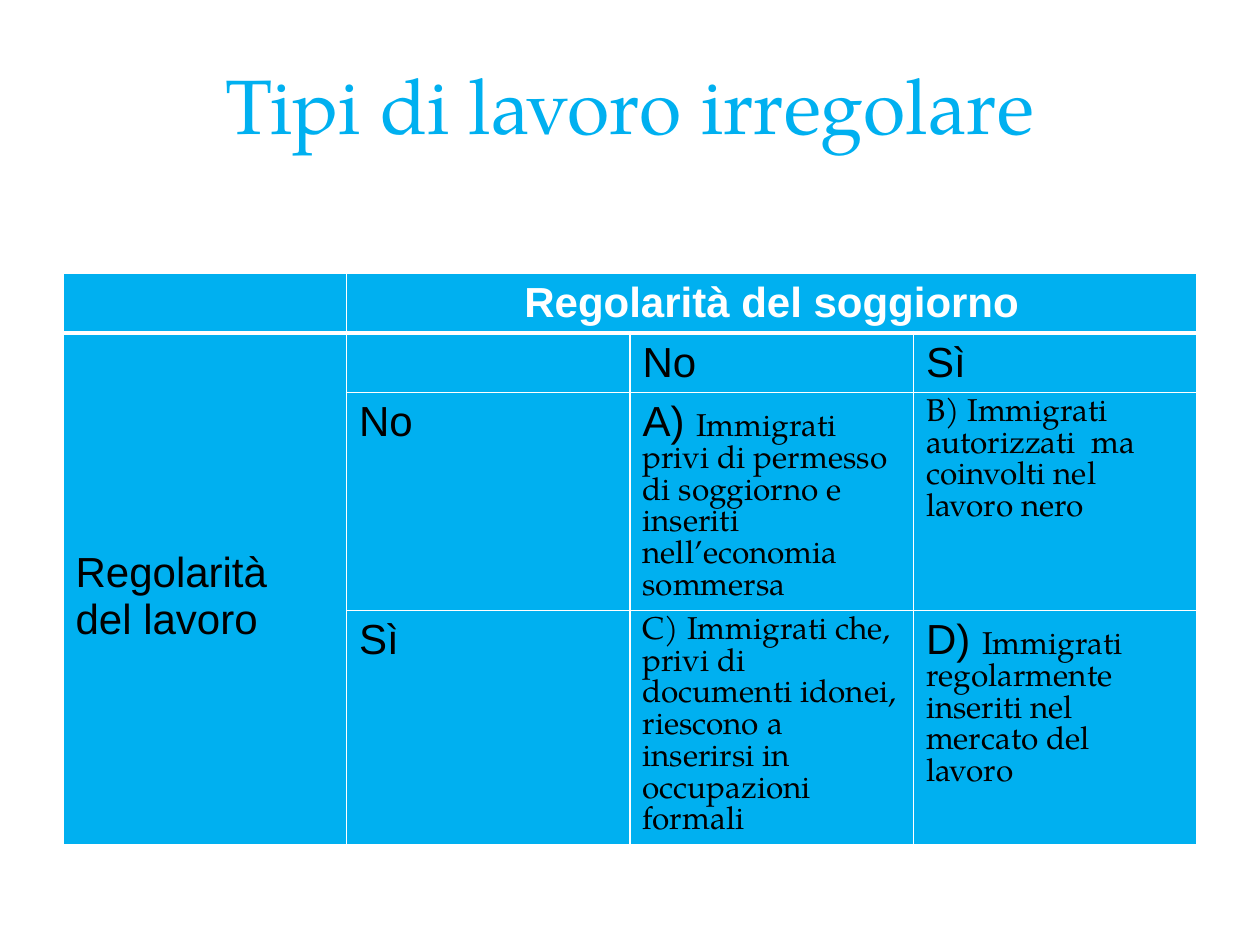
from lxml.etree import SubElement
from pptx import Presentation
from pptx.dml.color import RGBColor
from pptx.enum.text import MSO_ANCHOR, PP_ALIGN
from pptx.oxml.ns import qn
from pptx.util import Inches, Pt

SKY = RGBColor(0x00, 0xB0, 0xF0)
WHITE = RGBColor(0xFF, 0xFF, 0xFF)
BLACK = RGBColor(0x00, 0x00, 0x00)
LABEL_FONT = ("Arial", 24)
BODY_FONT = ("TeX Gyre Pagella", 18)


def set_font(font, face, color, bold=False):
    font.name, font.size = face[0], Pt(face[1])
    font.color.rgb = color
    font.bold = bold


def set_borders(cell, bottom=1, top=1):
    """Draw white cell borders; widths are in points."""
    properties = cell._tc.get_or_add_tcPr()
    widths = {"a:lnL": 1, "a:lnR": 1, "a:lnT": top, "a:lnB": bottom}
    for position, (tag, width) in enumerate(widths.items()):
        line = SubElement(properties, qn(tag), w=str(Pt(width)))
        fill = SubElement(line, qn("a:solidFill"))
        SubElement(fill, qn("a:srgbClr"), val=str(WHITE))
        properties.insert(position, line)


prs = Presentation()
prs.slide_width, prs.slide_height = Inches(10), Inches(7.5)
slide = prs.slides.add_slide(prs.slide_layouts[5])

title = slide.shapes.title
title.left, title.top = Inches(0.5), Inches(0.3)
title.width, title.height = Inches(9), Inches(1.25)
title.text_frame.text = "Tipi di lavoro irregolare"
title.text_frame.vertical_anchor = MSO_ANCHOR.MIDDLE
title.text_frame.margin_bottom = Inches(0.25)
heading = title.text_frame.paragraphs[0]
heading.alignment = PP_ALIGN.CENTER
set_font(heading.font, ("TeX Gyre Pagella", 44), SKY)

# Each cell is a list of (text, face) runs
rows = [
    [[], [("Regolarità del soggiorno", LABEL_FONT)], [], []],
    [[("Regolarità del lavoro", LABEL_FONT)], [],
     [("No", LABEL_FONT)], [("Sì", LABEL_FONT)]],
    [[], [("No", LABEL_FONT)],
     [("A) ", LABEL_FONT),
      ("Immigrati privi di permesso di soggiorno e inseriti "
       "nell’economia sommersa", BODY_FONT)],
     [("B) Immigrati autorizzati  ma coinvolti nel lavoro nero", BODY_FONT)]],
    [[], [("Sì", LABEL_FONT)],
     [("C) Immigrati che, privi di documenti idonei, riescono a inserirsi "
       "in occupazioni formali", BODY_FONT)],
     [("D) ", LABEL_FONT),
      ("Immigrati regolarmente inseriti nel mercato del lavoro", BODY_FONT)]],
]
row_heights = [0.46, 0.47, 1.73, 1.86]

table = slide.shapes.add_table(
    4, 4, Inches(0.5), Inches(2.17), Inches(9), Inches(sum(row_heights))
).table
for column in table.columns:
    column.width = Inches(2.25)

for r, (row, height) in enumerate(zip(rows, row_heights)):
    table.rows[r].height = Inches(height)
    for c, runs in enumerate(row):
        cell = table.cell(r, c)
        cell.fill.solid()
        cell.fill.fore_color.rgb = SKY
        set_borders(cell, bottom=3 if r == 0 else 1, top=3 if r == 1 else 1)
        paragraph = cell.text_frame.paragraphs[0]
        color = WHITE if r == 0 else BLACK
        for text, face in runs:
            run = paragraph.add_run()
            run.text = text
            if len(runs) > 1:
                set_font(run.font, face, color)
            else:
                set_font(paragraph.font, face, color, bold=r == 0)

stay_header = table.cell(0, 1)
stay_header.merge(table.cell(0, 3))
stay_header.text_frame.paragraphs[0].alignment = PP_ALIGN.CENTER

work_header = table.cell(1, 0)
work_header.merge(table.cell(3, 0))
work_header.vertical_anchor = MSO_ANCHOR.MIDDLE
work_header.margin_top = Inches(0.17)

prs.save("out.pptx")
